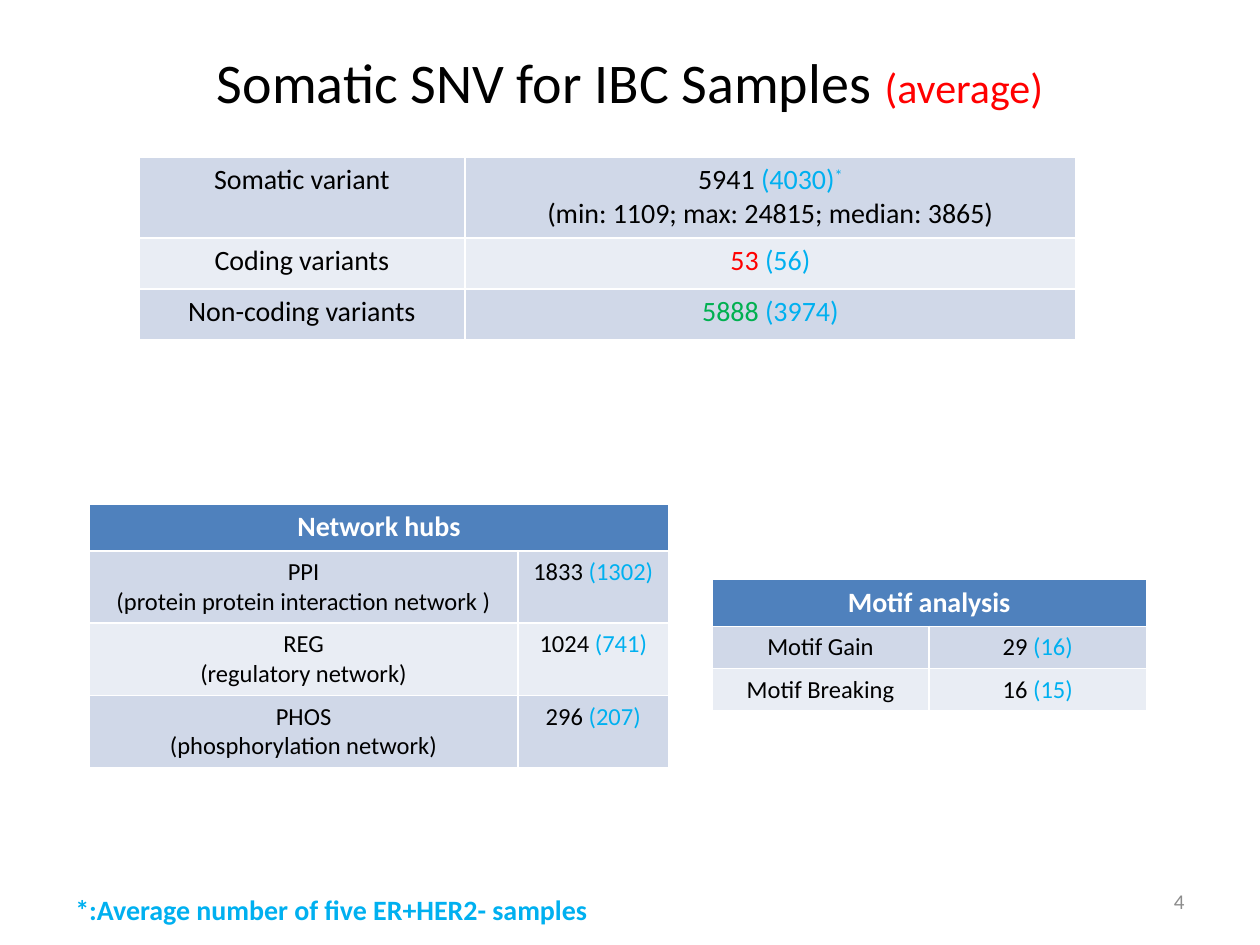
"""Build the slide of average somatic SNV counts for IBC samples."""
from pptx import Presentation
from pptx import util as u
from pptx.dml.color import RGBColor
from pptx.enum import text

BLACK = RGBColor(0x00, 0x00, 0x00)
WHITE = RGBColor(0xFF, 0xFF, 0xFF)
RED = RGBColor(0xFF, 0x00, 0x00)
GREEN = RGBColor(0x00, 0xB0, 0x50)
CYAN = RGBColor(0x00, 0xB0, 0xF0)
GREY = RGBColor(0x8C, 0x8C, 0x8C)
HEADER = RGBColor(0x4F, 0x81, 0xBD)
BANDS = [RGBColor(0xD0, 0xD8, 0xE8), RGBColor(0xE9, 0xED, 0xF4)]
CENTER = text.PP_ALIGN.CENTER


def write(frame, lines, size, align=CENTER, bold=False):
    """Write lines of (words, colour) spans into a text frame."""
    for index, line in enumerate(lines):
        para = frame.add_paragraph() if index else frame.paragraphs[0]
        para.alignment = align
        for words, colour in line:
            span = para.add_run()
            span.text = words
            span.font.name = "Calibri"
            span.font.size = u.Pt(size)
            span.font.bold = bold
            span.font.color.rgb = colour
            if words == "*":
                span._r.get_or_add_rPr().set("baseline", "30000")


def add_grid(page, place, widths, heights, rows, size, heading=None):
    """Add a banded table with an optional merged heading row."""
    left, top = place
    frame = page.shapes.add_table(len(heights), len(widths), u.Cm(left), u.Cm(top),
                                  u.Cm(sum(widths)), u.Cm(sum(heights)))
    table = frame.table
    table.first_row = heading is not None
    for column, width in zip(table.columns, widths):
        column.width = u.Cm(width)
    for row, height in zip(table.rows, heights):
        row.height = u.Cm(height)
    first = 0
    if heading:
        first = 1
        cell = table.cell(0, 0)
        cell.merge(table.cell(0, len(widths) - 1))
        cell.fill.solid()
        cell.fill.fore_color.rgb = HEADER
        write(cell.text_frame, [[(heading, WHITE)]], 16, bold=True)
    for index, row in enumerate(rows):
        for column, lines in enumerate(row):
            cell = table.cell(first + index, column)
            cell.fill.solid()
            cell.fill.fore_color.rgb = BANDS[index % 2]
            write(cell.text_frame, lines, size)


deck = Presentation()
deck.slide_width, deck.slide_height = u.Cm(25.4), u.Cm(19.05)
page = deck.slides.add_slide(deck.slide_layouts[5])

title = page.shapes.title
title.left, title.top, title.width, title.height = u.Cm(1.27), u.Cm(0.36), u.Cm(22.86), u.Cm(2.54)
title.text_frame.vertical_anchor = text.MSO_ANCHOR.MIDDLE
write(title.text_frame, [[("Somatic SNV for IBC Samples ", BLACK)]], 32)
accent = title.text_frame.paragraphs[0].add_run()
accent.text = "(average)"
accent.font.name = "Calibri"
accent.font.size = u.Pt(24)
accent.font.color.rgb = RED

hubs = [
    ("PPI", "(protein protein interaction network )", "1833 ", "(1302)"),
    ("REG", "(regulatory network)", "1024 ", "(741)"),
    ("PHOS", "(phosphorylation network)", "296 ", "(207)"),
]
hub_rows = [([[(short, BLACK)], [(full, BLACK)]], [[(count, BLACK), (other, CYAN)]])
            for short, full, count, other in hubs]
add_grid(page, (1.8, 10.16), [8.64, 3.04], [0.94, 1.44, 1.44, 1.44], hub_rows, 14, "Network hubs")

motifs = [("Motif Gain", "29 ", "(16)"), ("Motif Breaking", "16 ", "(15)")]
motif_rows = [([[(name, BLACK)]], [[(count, BLACK), (other, CYAN)]])
              for name, count, other in motifs]
add_grid(page, (14.35, 11.68), [4.38, 4.38], [0.94, 0.84, 0.84], motif_rows, 14, "Motif analysis")

variant_rows = [
    ([[("Somatic variant", BLACK)]],
     [[("5941 ", BLACK), ("(4030)", CYAN), ("*", CYAN)],
      [("(min: 1109; max: 24815; median: 3865)", BLACK)]]),
    ([[("Coding variants", BLACK)]], [[("53 ", RED), ("(56)", CYAN)]]),
    ([[("Non-coding variants", BLACK)]], [[("5888 ", GREEN), ("(3974)", CYAN)]]),
]
add_grid(page, (2.8, 3.16), [6.57, 12.32], [1.62, 1.03, 1.03], variant_rows, 16)

note = page.shapes.add_textbox(u.Cm(1.27), u.Cm(17.86), u.Cm(14.48), u.Cm(0.94))
note.text_frame.word_wrap = True
write(note.text_frame, [[("*:Average number of five ER+HER2- samples", CYAN)]], 16,
      text.PP_ALIGN.LEFT, True)

number = page.shapes.add_textbox(u.Cm(18.2), u.Cm(17.66), u.Cm(5.93), u.Cm(1.01))
number.text_frame.word_wrap = True
number.text_frame.vertical_anchor = text.MSO_ANCHOR.MIDDLE
write(number.text_frame, [[("4", GREY)]], 12, text.PP_ALIGN.RIGHT)

deck.save("out.pptx")
